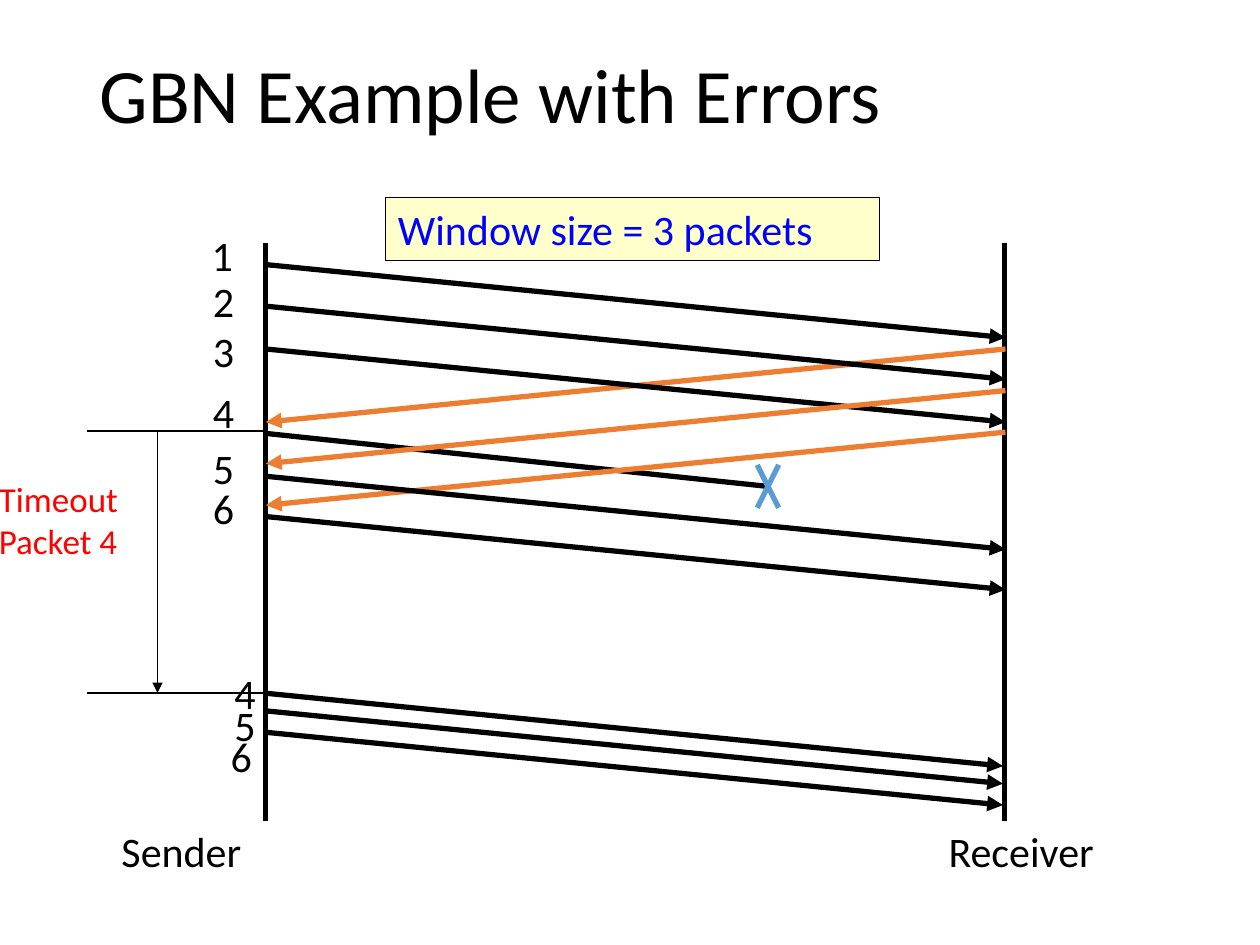
"""Build the Go-Back-N timing diagram slide with a lost packet and a timeout."""
import pptx
import pptx.dml.color
import pptx.enum.shapes
import pptx.enum.text
import pptx.oxml.ns
import pptx.util
from lxml import etree

Inches = pptx.util.Inches
Pt = pptx.util.Pt
ALIGN = pptx.enum.text.PP_ALIGN
ANCHOR = pptx.enum.text.MSO_ANCHOR
COLORS = {"ink": "000000", "ack": "ED7D31", "loss": "5B9BD5", "timeout": "FF0000",
          "note_text": "0000FF", "note_fill": "FFFFCC"}
SENDER, RECEIVER, TRAVEL = 2.11, 7.98, 0.58


def rgb(name):
    return pptx.dml.color.RGBColor.from_string(COLORS[name])


presentation = pptx.Presentation()
presentation.slide_width = Inches(10)
presentation.slide_height = Inches(7.5)
slide = presentation.slides.add_slide(presentation.slide_layouts[5])


def write(shape, lines, size, color="ink", align=ALIGN.LEFT, anchor=ANCHOR.TOP, inset=(0.1, 0.05)):
    frame = shape.text_frame
    frame.word_wrap = True
    frame.auto_size = pptx.enum.text.MSO_AUTO_SIZE.NONE
    frame.vertical_anchor = anchor
    frame.margin_left = frame.margin_right = Inches(inset[0])
    frame.margin_top = frame.margin_bottom = Inches(inset[1])
    for index, line in enumerate(lines):
        paragraph = frame.add_paragraph() if index else frame.paragraphs[0]
        paragraph.alignment = align
        run = paragraph.add_run()
        run.text = line
        run.font.name = "Calibri"
        run.font.size = Pt(size)
        run.font.color.rgb = rgb(color)


title = slide.shapes.title
title.left, title.top, title.width, title.height = map(Inches, (0.69, 0.4, 8.62, 1.45))
write(title, ["GBN Example with Errors"], 44)
title.text_frame.paragraphs[0].line_spacing = 0.9

window_note = slide.shapes.add_shape(pptx.enum.shapes.MSO_SHAPE.RECTANGLE,
                                     *map(Inches, (3.06, 1.57, 3.92, 0.5)))
window_note.shadow.inherit = False
window_note.fill.solid()
window_note.fill.fore_color.rgb = rgb("note_fill")
window_note.line.color.rgb = rgb("ink")
window_note.line.width = Pt(0.75)
write(window_note, ["Window size = 3 packets"], 24, "note_text")

for left, width, name in [(0.77, 1.34, "Sender"), (7.3, 1.61, "Receiver")]:
    box = slide.shapes.add_textbox(*map(Inches, (left, 6.5, width, 0.5)))
    write(box, [name], 24, align=ALIGN.CENTER, anchor=ANCHOR.MIDDLE)

timelines = [(x, 1.93, x, 6.52, "ink", 3, False) for x in (SENDER, 7.97)]
first_packet, *window_packets = [
    (SENDER, y, RECEIVER, y + TRAVEL, "ink", 3, True) for y in (2.1, 2.43, 2.77)]
first_ack, *later_acks = [
    (RECEIVER, y, SENDER, y + TRAVEL, "ack", 3, True) for y in (2.77, 3.1, 3.43)]
lost_packet = (SENDER, 3.44, 6.09, 3.86, "ink", 3, False)
loss_cross = [(6.01, 3.69, 6.18, 4.03, "loss", 3, False),
              (6.18, 3.69, 6.01, 4.03, "loss", 3, False)]
next_packets = [(SENDER, y, RECEIVER, y + TRAVEL, "ink", 3, True) for y in (3.78, 4.1)]
timeout_limits = [(2.13, y, 0.69, y, "ink", 0.75, False) for y in (3.42, 5.5)]
timeout_span = (1.25, 3.42, 1.25, 5.5, "ink", 0.75, True)
resent_packets = [(2.09, y, 7.96, y + TRAVEL, "ink", 3, True) for y in (5.5, 5.64, 5.81)]

for x1, y1, x2, y2, color, width, arrow in [
        *timelines, first_packet, first_ack, lost_packet, *window_packets, *later_acks,
        *loss_cross, *next_packets, *timeout_limits, timeout_span, *resent_packets]:
    connector = slide.shapes.add_connector(pptx.enum.shapes.MSO_CONNECTOR.STRAIGHT,
                                           *map(Inches, (x1, y1, x2, y2)))
    connector.line.color.rgb = rgb(color)
    connector.line.width = Pt(width)
    if arrow:
        etree.SubElement(connector.line._get_or_add_ln(),
                         pptx.oxml.ns.qn("a:tailEnd"), type="triangle")
    etree.SubElement(connector._element.spPr, pptx.oxml.ns.qn("a:effectLst"))

for left, top, number in [
        (1.59, 1.78, "1"), (1.6, 2.15, "2"), (1.6, 2.54, "3"),
        (1.6, 3.03, "4"), (1.6, 3.47, "5"), (1.6, 3.79, "6"),
        (1.77, 5.26, "4"), (1.77, 5.51, "5"), (1.74, 5.76, "6")]:
    packet_label = slide.shapes.add_textbox(*map(Inches, (left, top, 0.37, 0.49)))
    write(packet_label, [number], 24, inset=(0.09, 0.04))

timeout_label = slide.shapes.add_textbox(*map(Inches, (-0.1, 3.75, 1.32, 0.76)))
write(timeout_label, ["Timeout", "Packet 4"], 20, "timeout", inset=(0.09, 0.04))

presentation.save("out.pptx")
